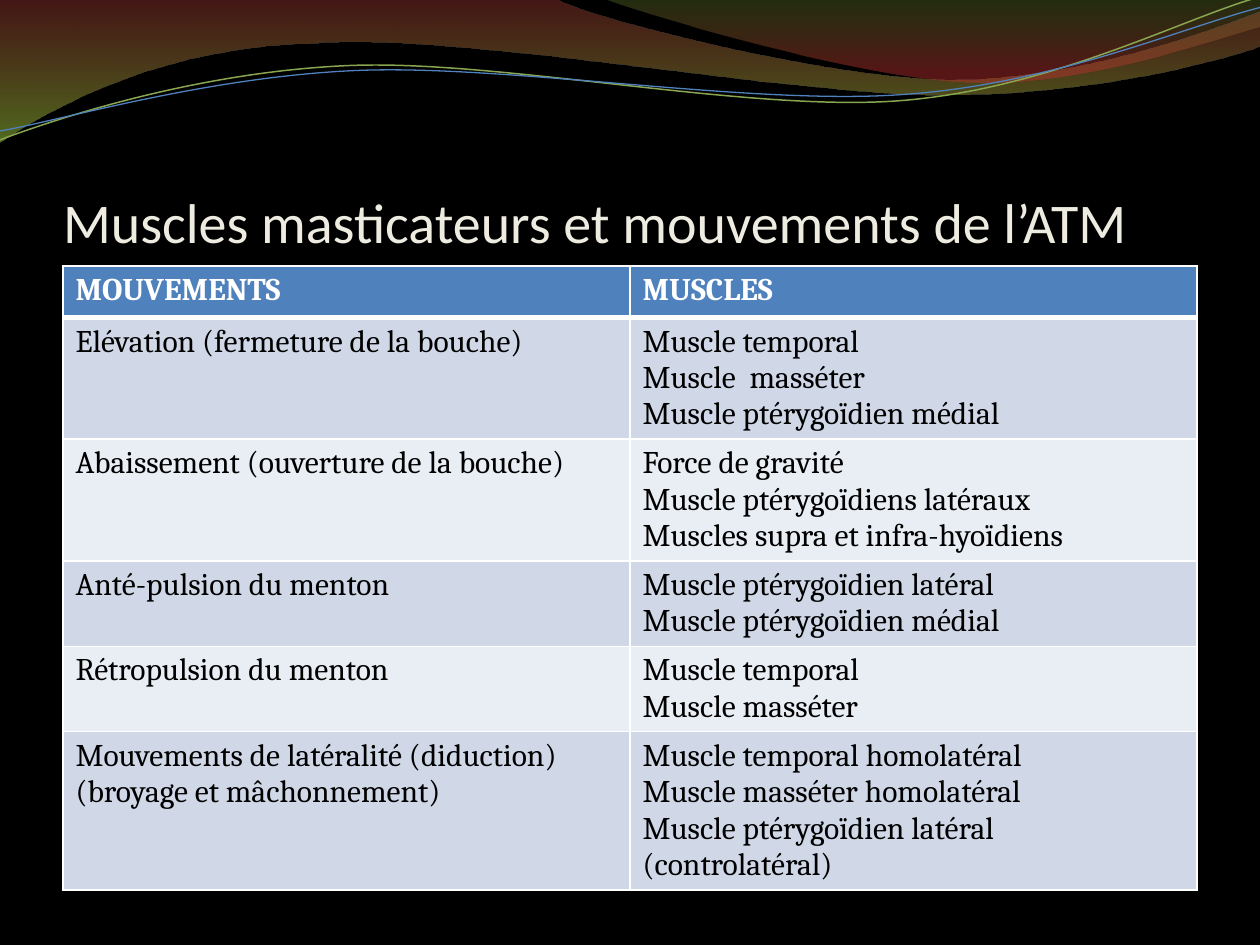
from dataclasses import dataclass
from math import cos, radians, sin
from typing import Optional

from lxml import etree
from pptx import Presentation
from pptx import util as u
from pptx.dml.color import RGBColor
from pptx.enum import text
from pptx.oxml.ns import qn


@dataclass(frozen=True)
class Theme:
    background: str = "000000"
    title: str = "EEECE1"
    header: str = "4F81BD"
    bands: tuple = ("D0D8E8", "E9EDF4")
    grid: str = "FFFFFF"
    body: str = "000000"
    title_font: str = "Calibri"
    body_font: str = "Cambria"
    title_size: int = 32
    body_size: int = 18


@dataclass(frozen=True)
class Stop:
    position: float
    color: str
    opacity: int


@dataclass(frozen=True)
class Wave:
    """A start point, then segments: one point for a line, three for a Bézier curve."""
    start: tuple
    segments: tuple
    stops: tuple = ()
    line: Optional[str] = None
    width: float = 0
    center: tuple = (0, 0)
    rotation: float = 0


THEME = Theme()

WAVES = (
    Wave((0, 0), (((4.4, -0.01),),
                  ((4.76, 0.17), (6.64, 0.63), (7.58, 0.63)),
                  ((8.53, 0.63), (9.58, 0.26), (10, 0.09)),
                  ((10.01, 0.36),),
                  ((9.83, 0.44), (8.7, 0.76), (7.46, 0.75)),
                  ((6.22, 0.75), (3.82, 0.28), (2.57, 0.34)),
                  ((1.29, 0.36), (0.46, 0.83), (-0.01, 1.13)),
                  ((0, 0),)),
         stops=(Stop(0, "973330", 45), Stop(1, "95C238", 55))),
    Wave((4.79, -0.01), (((5.09, 0.11), (6.82, 0.62), (7.69, 0.65)),
                         ((8.56, 0.69), (9.61, 0.32), (10, 0.21)),
                         ((10, 0),),
                         ((4.79, -0.01),)),
         stops=(Stop(0, "769537", 30), Stop(0.8, "BE3330", 45))),
    Wave((0, 1.11), (((0.48, 0.93), (1.58, 0.57), (2.77, 0.52)),
                     ((3.95, 0.47), (5.93, 0.89), (7.13, 0.8)),
                     ((8.33, 0.71), (9.38, 0.15), (9.98, -0.02))),
         line="89A54F", width=0.85, center=(4.99, 0.58), rotation=-2.7),
    Wave((0, 1.04), (((0.47, 0.96), (1.64, 0.61), (2.83, 0.56)),
                     ((4.03, 0.51), (5.97, 0.84), (7.17, 0.75)),
                     ((8.36, 0.67), (9.41, 0.21), (10, 0.06))),
         line="4F81BD", width=0.75, center=(5, 0.59), rotation=-2.7),
)

TITLE = "Muscles masticateurs et mouvements de l’ATM"
ROWS = (
    ("MOUVEMENTS", "MUSCLES"),
    ("Elévation (fermeture de la bouche)",
     "Muscle temporal\nMuscle  masséter\nMuscle ptérygoïdien médial"),
    ("Abaissement (ouverture de la bouche)",
     "Force de gravité\nMuscle ptérygoïdiens latéraux\nMuscles supra et infra-hyoïdiens"),
    ("Anté-pulsion du menton", "Muscle ptérygoïdien latéral\nMuscle ptérygoïdien médial"),
    ("Rétropulsion du menton", "Muscle temporal\nMuscle masséter"),
    ("Mouvements de latéralité (diduction) (broyage et mâchonnement)",
     "Muscle temporal homolatéral\nMuscle masséter homolatéral\n"
     "Muscle ptérygoïdien latéral (controlatéral)"),
)


def rgb(color: str) -> RGBColor:
    return RGBColor.from_string(color)


def write(frame, content: str, *, font: str, size: float, color: str, bold: bool = False) -> None:
    """Fill a text frame, one paragraph per line of content."""
    frame.text = content
    for para in frame.paragraphs:
        para.alignment = text.PP_ALIGN.LEFT
        for span in para.runs:
            span.font.name, span.font.size = font, u.Pt(size)
            span.font.bold, span.font.color.rgb = bold, rgb(color)


def turn(point: tuple, center: tuple, degrees: float) -> tuple:
    angle = radians(degrees)
    x, y = point[0] - center[0], point[1] - center[1]
    return (center[0] + x * cos(angle) - y * sin(angle),
            center[1] + x * sin(angle) + y * cos(angle))


def bend(shape, segments: tuple) -> None:
    """Join each run of three line points into one Bézier curve."""
    lines = list(shape._element.iter(qn("a:lnTo")))
    for segment in segments:
        group, lines = lines[:len(segment)], lines[len(segment):]
        if len(group) == 3:
            curve = etree.Element(qn("a:cubicBezTo"))
            group[0].addprevious(curve)
            for line in group:
                curve.append(line[0])
                line.getparent().remove(line)


def draw_wave(page, wave: Wave) -> None:
    # Points are turned back so that the shape's own rotation restores them
    points = [tuple(u.Inches(v) for v in turn(point, wave.center, -wave.rotation))
              for point in (wave.start, *(p for segment in wave.segments for p in segment))]
    builder = page.shapes.build_freeform(*points[0])
    builder.add_line_segments(points[1:], close=bool(wave.stops))
    shape = builder.convert_to_shape()
    bend(shape, wave.segments)
    shape.shadow.inherit = False
    shape.rotation = wave.rotation
    if wave.line:
        shape.fill.background()
        shape.line.color.rgb = rgb(wave.line)
        shape.line.width = u.Pt(wave.width)
        return
    shape.line.fill.background()
    shape.fill.gradient()
    shape.fill.gradient_angle = 270  # counter-clockwise: top to bottom
    for target, stop in zip(shape.fill.gradient_stops, wave.stops):
        target.position = stop.position
        target.color.rgb = rgb(stop.color)
    colors = shape._element.spPr.iter(qn("a:srgbClr"))
    for node, stop in zip(colors, wave.stops):
        etree.SubElement(node, qn("a:alpha"), val=str(stop.opacity * 1000))


def set_borders(cell, color: str, widths: dict) -> None:
    properties = cell._tc.get_or_add_tcPr()
    for index, (side, width) in enumerate(widths.items()):
        line = etree.Element(qn(f"a:ln{side}"), w=str(u.Pt(width)))
        fill = etree.SubElement(line, qn("a:solidFill"))
        etree.SubElement(fill, qn("a:srgbClr"), val=color)
        properties.insert(index, line)


def draw_table(page) -> None:
    height = u.Inches(5.11)
    frame = page.shapes.add_table(len(ROWS), 2, u.Inches(0.5), u.Inches(2.11), u.Inches(9), height)
    for r, values in enumerate(ROWS):
        header = r == 0
        frame.table.rows[r].height = u.Inches(0.41)  # rows grow with their text
        for c, value in enumerate(values):
            cell = frame.table.cell(r, c)
            cell.fill.solid()
            cell.fill.fore_color.rgb = rgb(THEME.header if header else THEME.bands[(r - 1) % 2])
            write(cell.text_frame, value, font=THEME.body_font, size=THEME.body_size,
                  color=THEME.grid if header else THEME.body, bold=header)
            set_borders(cell, THEME.grid, {"L": 1, "R": 1, "T": 3 if r == 1 else 1,
                                           "B": 3 if header else 1})
    frame.height = height


def place_title(page) -> None:
    title = page.shapes.title
    title.left, title.top, title.width, title.height = map(u.Inches, (0.5, 0.77, 9, 1.25))
    box = title.text_frame
    box.margin_left = box.margin_right = box.margin_bottom = 0
    box.margin_top = u.Inches(0.05)
    box.vertical_anchor = text.MSO_ANCHOR.BOTTOM
    box.auto_size = text.MSO_AUTO_SIZE.NONE
    box.word_wrap = True
    write(box, TITLE, font=THEME.title_font, size=THEME.title_size, color=THEME.title)
    page.shapes._spTree.append(title._element)  # in front of the waves


def main() -> None:
    deck = Presentation()
    deck.slide_width, deck.slide_height = u.Inches(10), u.Inches(7.5)
    page = deck.slides.add_slide(deck.slide_layouts[5])
    page.background.fill.solid()
    page.background.fill.fore_color.rgb = rgb(THEME.background)
    # Decorative waves, then content
    for wave in WAVES:
        draw_wave(page, wave)
    place_title(page)
    draw_table(page)
    deck.save("out.pptx")


if __name__ == "__main__":
    main()
